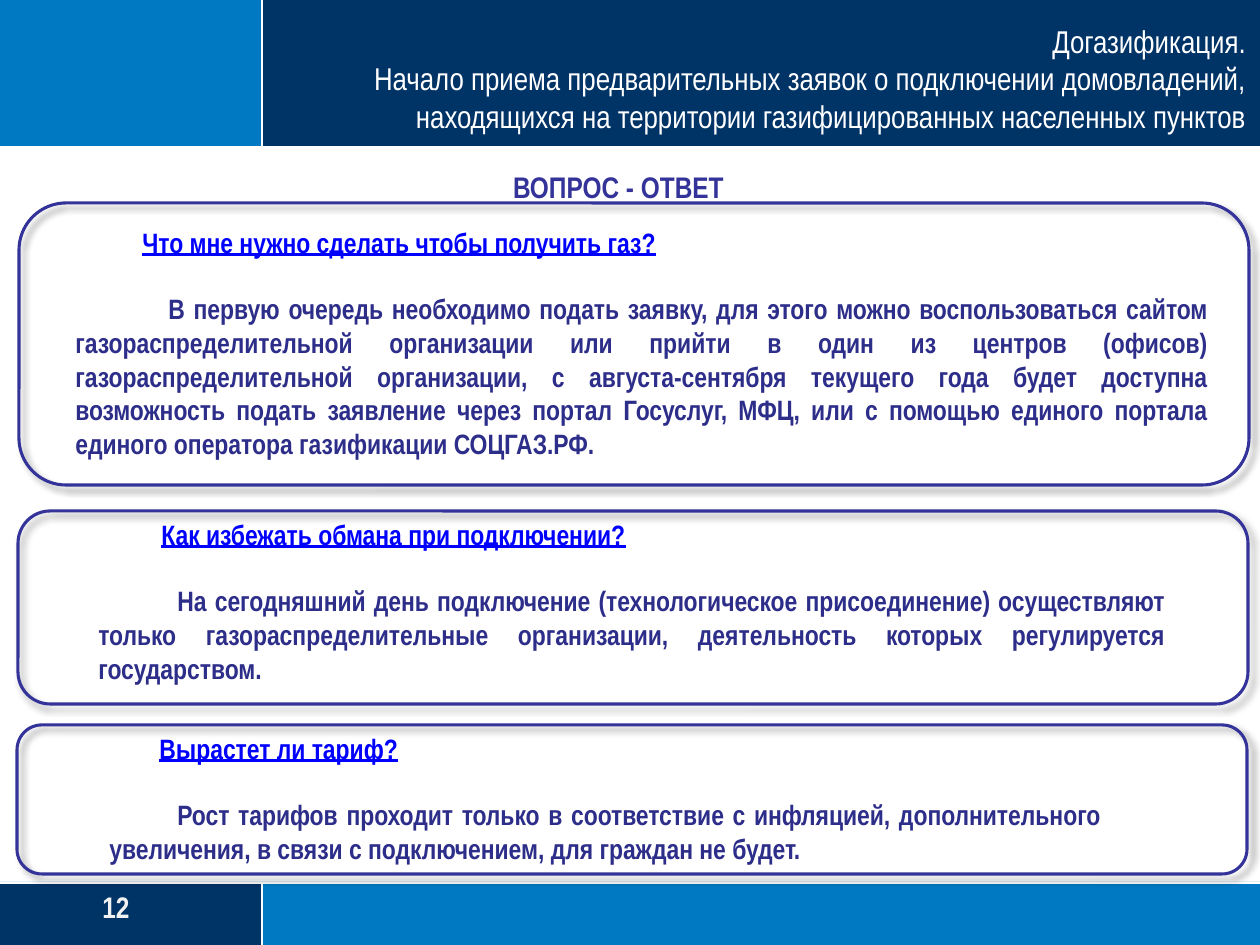
from lxml import etree
from pptx import Presentation
from pptx import util as u
from pptx.dml.color import RGBColor
from pptx.enum import shapes, text
from pptx.oxml.ns import qn

SCALE = 914400 / 126  # EMU per px
WHITE = RGBColor(0xFF, 0xFF, 0xFF)
PALE = RGBColor(0xF2, 0xF2, 0xF2)
SKY = RGBColor(0x00, 0x79, 0xC2)
NAVY = RGBColor(0x00, 0x33, 0x66)
INDIGO = RGBColor(0x33, 0x33, 0x99)
DEEP = RGBColor(0x2D, 0x2D, 0x8A)
LINK = RGBColor(0x00, 0x00, 0xFF)


def px(*lengths):
    return [u.Emu(round(length * SCALE)) for length in lengths]


def write(para, words, color, align, **formats):
    para.alignment = align
    span = para.add_run()
    span.text = words
    span.font.color.rgb = color
    for name, value in {"name": "Arial Narrow", "bold": True, **formats}.items():
        setattr(span.font, name, value)


deck = Presentation()
deck.slide_width, deck.slide_height = px(1260, 945)
page = deck.slides.add_slide(deck.slide_layouts[5])
left, center, right, justify = (text.PP_ALIGN.LEFT, text.PP_ALIGN.CENTER,
                                text.PP_ALIGN.RIGHT, text.PP_ALIGN.JUSTIFY)

# Header and footer bands
for area, color in [
    ((0, 882, 1260, 63), SKY),
    ((0, 883, 261, 62), NAVY),
    ((0, 0, 263, 148), SKY),
    ((262, 0, 998, 148), NAVY),
]:
    band = page.shapes.add_shape(shapes.MSO_SHAPE.RECTANGLE, *px(*area))
    band.shadow.inherit = False
    band.fill.solid()
    band.fill.fore_color.rgb = color
    band.line.fill.background()

# White dividers
for ends in [(0, 147, 1260, 147), (262, 882, 262, 945),
             (0, 883, 1260, 883), (262, 0, 262, 147)]:
    divider = page.shapes.add_connector(shapes.MSO_CONNECTOR.STRAIGHT, *px(*ends))
    divider.line.color.rgb = WHITE
    divider.line.width = u.Pt(1.25)
    etree.SubElement(divider._element.spPr, qn("a:effectLst"))

# Title, brought in front of the header band
title = page.shapes.title
page.shapes._spTree.append(title._element)
title.left, title.top, title.width, title.height = px(285, 0, 961, 135)
frame = title.text_frame
for name, value in {
    "margin_left": 0, "margin_top": 0, "margin_right": 0, "margin_bottom": 0,
    "word_wrap": True, "auto_size": text.MSO_AUTO_SIZE.NONE,
    "vertical_anchor": text.MSO_ANCHOR.BOTTOM,
}.items():
    setattr(frame, name, value)
write(frame.paragraphs[0], "Догазификация.", WHITE, right, size=u.Pt(18), bold=False)
write(frame.add_paragraph(),
      "Начало приема предварительных заявок о подключении домовладений, "
      "находящихся на территории газифицированных населенных пунктов",
      WHITE, right, size=u.Pt(18), bold=False)

# Section heading and page number
for area, words, color in [
    ((435, 163, 367, 49), "ВОПРОС - ОТВЕТ", INDIGO),
    ((52, 883, 128, 49), "12", PALE),
]:
    box = page.shapes.add_textbox(*px(*area))
    box.text_frame.word_wrap = True
    write(box.text_frame.paragraphs[0], words, color, center, size=u.Pt(17))

# Question cards: outline, text area, first-line indents, question, answer
cards = [
    ((19, 203, 1230, 282), (63, 219, 1158, 252), (67, 93),
     "Что мне нужно сделать чтобы получить газ?",
     "В первую очередь необходимо подать заявку, для этого можно воспользоваться "
     "сайтом газораспределительной организации или прийти в один из центров (офисов) "
     "газораспределительной организации, с августа-сентября текущего года будет "
     "доступна возможность подать заявление через портал Госуслуг, МФЦ, или с помощью "
     "единого портала единого оператора газификации СОЦГАЗ.РФ."),
    ((18, 511, 1230, 193), (86, 511, 1092, 183), (63, 79),
     "Как избежать обмана при подключении?",
     "На сегодняшний день подключение (технологическое присоединение) осуществляют "
     "только газораспределительные организации, деятельность которых регулируется "
     "государством."),
    ((17, 725, 1230, 149), (97, 725, 1017, 149), (50, 68),
     "Вырастет ли тариф?",
     "Рост тарифов проходит только в соответствие с инфляцией, дополнительного "
     "увеличения, в связи с подключением, для граждан не будет."),
]
for outline, area, indents, question, answer in cards:
    card = page.shapes.add_shape(shapes.MSO_SHAPE.ROUNDED_RECTANGLE, *px(*outline))
    card.fill.background()
    card.line.color.rgb = INDIGO
    card.line.width = u.Pt(1.75)
    card.shadow.inherit = False
    shadow = etree.SubElement(
        card._element.spPr.find(qn("a:effectLst")), qn("a:outerShdw"),
        blurRad="50800", dist="38100", dir="2700000", algn="tl", rotWithShape="0")
    black = etree.SubElement(shadow, qn("a:srgbClr"), val="000000")
    etree.SubElement(black, qn("a:alpha"), val="40000")

    box = page.shapes.add_textbox(*px(*area))
    box.text_frame.word_wrap = True
    ask, reply = box.text_frame.paragraphs[0], box.text_frame.add_paragraph()
    write(ask, question, LINK, left, size=u.Pt(16), underline=True)
    write(reply, answer, DEEP, justify, size=u.Pt(16))
    reply.space_before = u.Pt(19)
    for para, indent in zip((ask, reply), px(*indents)):
        para._p.get_or_add_pPr().set("indent", str(indent))

deck.save("out.pptx")
